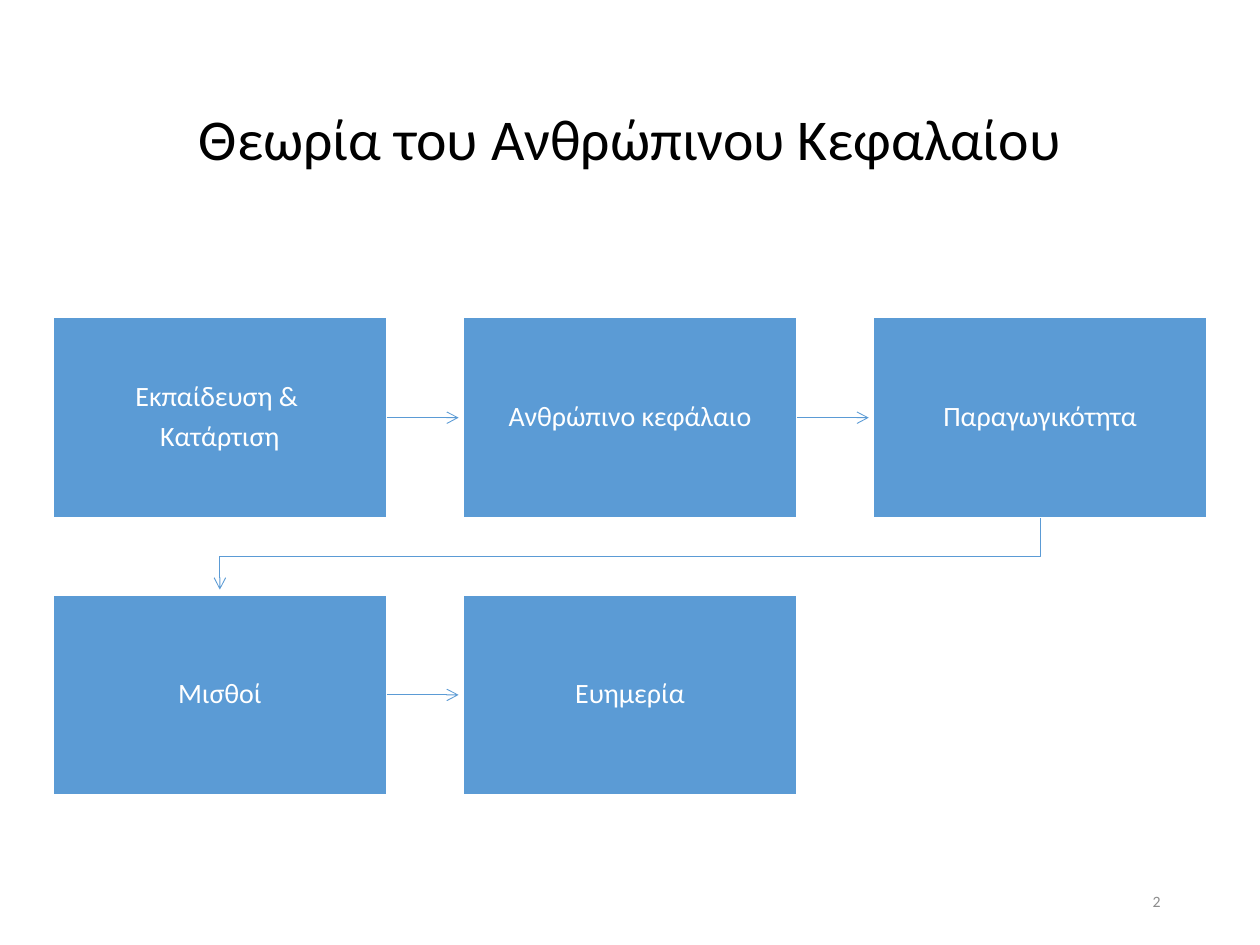
from lxml.etree import SubElement
from pptx import Presentation
from pptx.dml.color import RGBColor
from pptx.enum.shapes import MSO_CONNECTOR, MSO_SHAPE
from pptx.enum.text import MSO_ANCHOR, PP_ALIGN
from pptx.oxml.ns import qn
from pptx.util import Inches, Pt

BLUE = RGBColor(0x5B, 0x9B, 0xD5)
WHITE = RGBColor(0xFF, 0xFF, 0xFF)
BLACK = RGBColor(0x00, 0x00, 0x00)
GRAY = RGBColor(0x8C, 0x8C, 0x8C)

# Grid of boxes, in inches: three columns between equal side margins
SLIDE_WIDTH, SLIDE_HEIGHT = 10, 7.5
LEFT, TOP = 0.42, 2.52
BOX_WIDTH, BOX_HEIGHT = 2.65, 1.59
COLUMN_STEP = (SLIDE_WIDTH - 2 * LEFT - BOX_WIDTH) / 2
ROW_STEP = 2.2
ARROW_LENGTH = 0.57

ROWS = [
    [["Εκπαίδευση & ", "Κατάρτιση"], ["Ανθρώπινο κεφάλαιο"], ["Παραγωγικότητα"]],
    [["Μισθοί"], ["Ευημερία"]],
]

presentation = Presentation()
presentation.slide_width = Inches(SLIDE_WIDTH)
presentation.slide_height = Inches(SLIDE_HEIGHT)
slide = presentation.slides.add_slide(presentation.slide_layouts[6])


def write(shape, lines, size, color, alignment, line_spacing=1.0, space_after=0):
    frame = shape.text_frame
    frame.word_wrap = True
    frame.vertical_anchor = MSO_ANCHOR.MIDDLE
    frame.text = "\n".join(lines)
    for paragraph in frame.paragraphs:
        paragraph.alignment = alignment
        paragraph.line_spacing = line_spacing
        paragraph.space_after = Pt(space_after)
        paragraph.font.name = "Calibri"
        paragraph.font.size = Pt(size)
        paragraph.font.color.rgb = color


def style_arrow(arrow):
    """Give a line its colour, width and open arrowhead, without a shadow."""
    arrow.line.color.rgb = BLUE
    arrow.line.width = Pt(0.5)
    properties = arrow._element.spPr
    SubElement(properties.find(qn("a:ln")), qn("a:tailEnd"), type="arrow")
    SubElement(properties, qn("a:effectLst"))


title = slide.shapes.add_textbox(Inches(0.69), Inches(0.4), Inches(8.62), Inches(1.45))
write(title, ["Θεωρία του Ανθρώπινου Κεφαλαίου"], 33, BLACK, PP_ALIGN.CENTER, 0.9)

for row, boxes in enumerate(ROWS):
    top = TOP + row * ROW_STEP
    for column, lines in enumerate(boxes):
        left = LEFT + column * COLUMN_STEP
        box = slide.shapes.add_shape(
            MSO_SHAPE.RECTANGLE,
            Inches(left), Inches(top), Inches(BOX_WIDTH), Inches(BOX_HEIGHT),
        )
        box.shadow.inherit = False
        box.fill.solid()
        box.fill.fore_color.rgb = BLUE
        box.line.color.rgb = WHITE
        box.line.width = Pt(1)
        frame = box.text_frame
        frame.margin_left = frame.margin_right = Inches(0.12)
        frame.margin_top = frame.margin_bottom = Inches(0.12)
        write(box, lines, 16, WHITE, PP_ALIGN.CENTER, 0.9, 5.6)

        if column < len(boxes) - 1:
            start = left + BOX_WIDTH
            middle = top + BOX_HEIGHT / 2
            arrow = slide.shapes.add_connector(
                MSO_CONNECTOR.STRAIGHT,
                Inches(start), Inches(middle),
                Inches(start + ARROW_LENGTH), Inches(middle),
            )
            style_arrow(arrow)

# Bent arrow from the last box of the first row to the first box of the second
first_center = Inches(LEFT + BOX_WIDTH / 2)
last_center = Inches(LEFT + BOX_WIDTH / 2 + 2 * COLUMN_STEP)
row_bottom = Inches(TOP + BOX_HEIGHT)
bend = Inches((TOP + BOX_HEIGHT + TOP + ROW_STEP) / 2)
arrow_end = row_bottom + Inches(ARROW_LENGTH)
builder = slide.shapes.build_freeform(last_center, row_bottom)
builder.add_line_segments(
    [(last_center, bend), (first_center, bend), (first_center, arrow_end)],
    close=False,
)
row_arrow = builder.convert_to_shape()
row_arrow.fill.background()
style_arrow(row_arrow)

page_number = slide.shapes.add_textbox(Inches(7.06), Inches(6.95), Inches(2.25), Inches(0.4))
write(page_number, ["2"], 9, GRAY, PP_ALIGN.RIGHT)

presentation.save("out.pptx")
